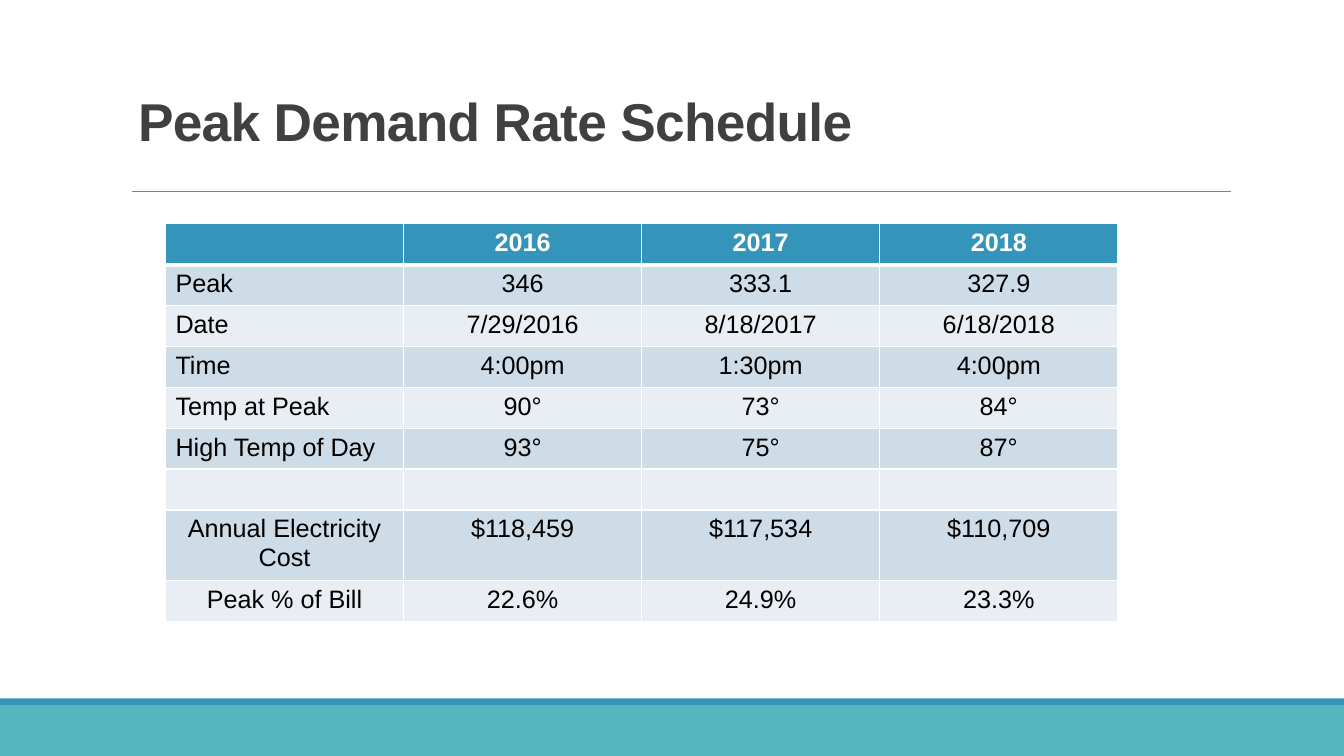
import dataclasses

import lxml.etree
import pptx
import pptx.dml.color
import pptx.enum.shapes
import pptx.enum.text
import pptx.oxml.ns
import pptx.util

Cm = pptx.util.Cm
Pt = pptx.util.Pt
ALIGN = pptx.enum.text.PP_ALIGN

# Content
TITLE = "Peak Demand Rate Schedule"
HEADER = ("", "2016", "2017", "2018")
ROWS = [
    ("Peak", "346", "333.1", "327.9"),
    ("Date", "7/29/2016", "8/18/2017", "6/18/2018"),
    ("Time", "4:00pm", "1:30pm", "4:00pm"),
    ("Temp at Peak", "90°", "73°", "84°"),
    ("High Temp of Day", "93°", "75°", "87°"),
    ("", "", "", ""),
    ("Annual Electricity Cost", "$118,459", "$117,534", "$110,709"),
    ("Peak % of Bill", "22.6%", "24.9%", "23.3%"),
]
CENTERED_LABELS = {"Annual Electricity Cost", "Peak % of Bill"}
TALL_LABEL = "Annual Electricity Cost"


@dataclasses.dataclass(frozen=True)
class Theme:
    font: str = "Arial"
    title_size: int = 38
    table_size: int = 18
    title: str = "404040"
    rule: str = "808080"
    blue: str = "3494BA"
    teal: str = "58B6C0"
    bands: tuple = ("CEDCE7", "E8EEF3")
    text: str = "000000"
    white: str = "FFFFFF"


THEME = Theme()

# Layout
SLIDE_WIDTH, SLIDE_HEIGHT = Cm(33.87), Cm(19.05)
FOOTER_TOP, STRIPE_HEIGHT = Cm(17.78), Cm(0.18)
RULE_LEFT, RULE_RIGHT, RULE_TOP = Cm(3.33), Cm(31.01), Cm(4.82)
TABLE_LEFT, TABLE_TOP, COLUMN_WIDTH = Cm(4.17), Cm(5.64), Cm(6)
ROW_HEIGHT, TALL_ROW_HEIGHT = Cm(1.03), Cm(1.69)


def rgb(value):
    return pptx.dml.color.RGBColor.from_string(value)


def style_paragraph(paragraph, size, color, bold=False):
    font = paragraph.font
    font.name, font.size, font.bold = THEME.font, Pt(size), bold
    font.color.rgb = rgb(color)


def add_band(slide, top, height, color):
    band = slide.shapes.add_shape(
        pptx.enum.shapes.MSO_SHAPE.RECTANGLE, 0, top, SLIDE_WIDTH, height)
    band.shadow.inherit = False
    band.fill.solid()
    band.fill.fore_color.rgb = rgb(color)
    band.line.fill.background()


def add_rule(slide):
    rule = slide.shapes.add_connector(
        pptx.enum.shapes.MSO_CONNECTOR.STRAIGHT,
        RULE_LEFT, RULE_TOP, RULE_RIGHT, RULE_TOP)
    rule.line.color.rgb = rgb(THEME.rule)
    rule.line.width = Pt(0.5)
    lxml.etree.SubElement(
        rule._element.spPr, pptx.oxml.ns.qn("a:effectLst"))


def add_title(slide):
    box = slide.shapes.add_textbox(Cm(3.23), Cm(2.35), Cm(27.94), Cm(1.57))
    box.text_frame.word_wrap = True
    paragraph = box.text_frame.paragraphs[0]
    paragraph.line_spacing = 0.85
    style_paragraph(paragraph, THEME.title_size, THEME.title, bold=True)
    run = paragraph.add_run()
    run.text = TITLE
    run._r.get_or_add_rPr().set("spc", "-50")


def set_borders(cell, widths):
    """Draw white borders; widths maps a side (L, R, T, B) to points."""
    qn = pptx.oxml.ns.qn
    properties = cell._tc.get_or_add_tcPr()
    for side, width in widths.items():
        line = lxml.etree.SubElement(
            properties, qn(f"a:ln{side}"), w=str(Pt(width)))
        fill = lxml.etree.SubElement(line, qn("a:solidFill"))
        lxml.etree.SubElement(fill, qn("a:srgbClr"), val=THEME.white)


def add_rate_table(slide):
    records = [HEADER] + ROWS
    heights = [TALL_ROW_HEIGHT if record[0] == TALL_LABEL else ROW_HEIGHT
               for record in records]
    table = slide.shapes.add_table(
        len(records), len(HEADER), TABLE_LEFT, TABLE_TOP,
        COLUMN_WIDTH * len(HEADER), sum(heights)).table
    for column in table.columns:
        column.width = COLUMN_WIDTH

    for row_index, record in enumerate(records):
        table.rows[row_index].height = heights[row_index]
        is_header = row_index == 0
        fill = THEME.blue if is_header else THEME.bands[(row_index - 1) % 2]
        borders = {"L": 1, "R": 1, "T": 3 if row_index == 1 else 1,
                   "B": 3 if is_header else 1}
        for column_index, text in enumerate(record):
            cell = table.cell(row_index, column_index)
            set_borders(cell, borders)
            cell.fill.solid()
            cell.fill.fore_color.rgb = rgb(fill)
            cell.text = text
            paragraph = cell.text_frame.paragraphs[0]
            centered = column_index > 0 or text in CENTERED_LABELS
            paragraph.alignment = ALIGN.CENTER if centered else ALIGN.LEFT
            style_paragraph(paragraph, THEME.table_size,
                            THEME.white if is_header else THEME.text,
                            bold=is_header)


def main():
    presentation = pptx.Presentation()
    presentation.slide_width = SLIDE_WIDTH
    presentation.slide_height = SLIDE_HEIGHT
    slide = presentation.slides.add_slide(presentation.slide_layouts[6])

    # Footer bands
    add_band(slide, FOOTER_TOP, SLIDE_HEIGHT - FOOTER_TOP, THEME.teal)
    add_band(slide, FOOTER_TOP - STRIPE_HEIGHT, STRIPE_HEIGHT, THEME.blue)

    # Heading and table
    add_rule(slide)
    add_title(slide)
    add_rate_table(slide)

    presentation.save("out.pptx")


if __name__ == "__main__":
    main()
